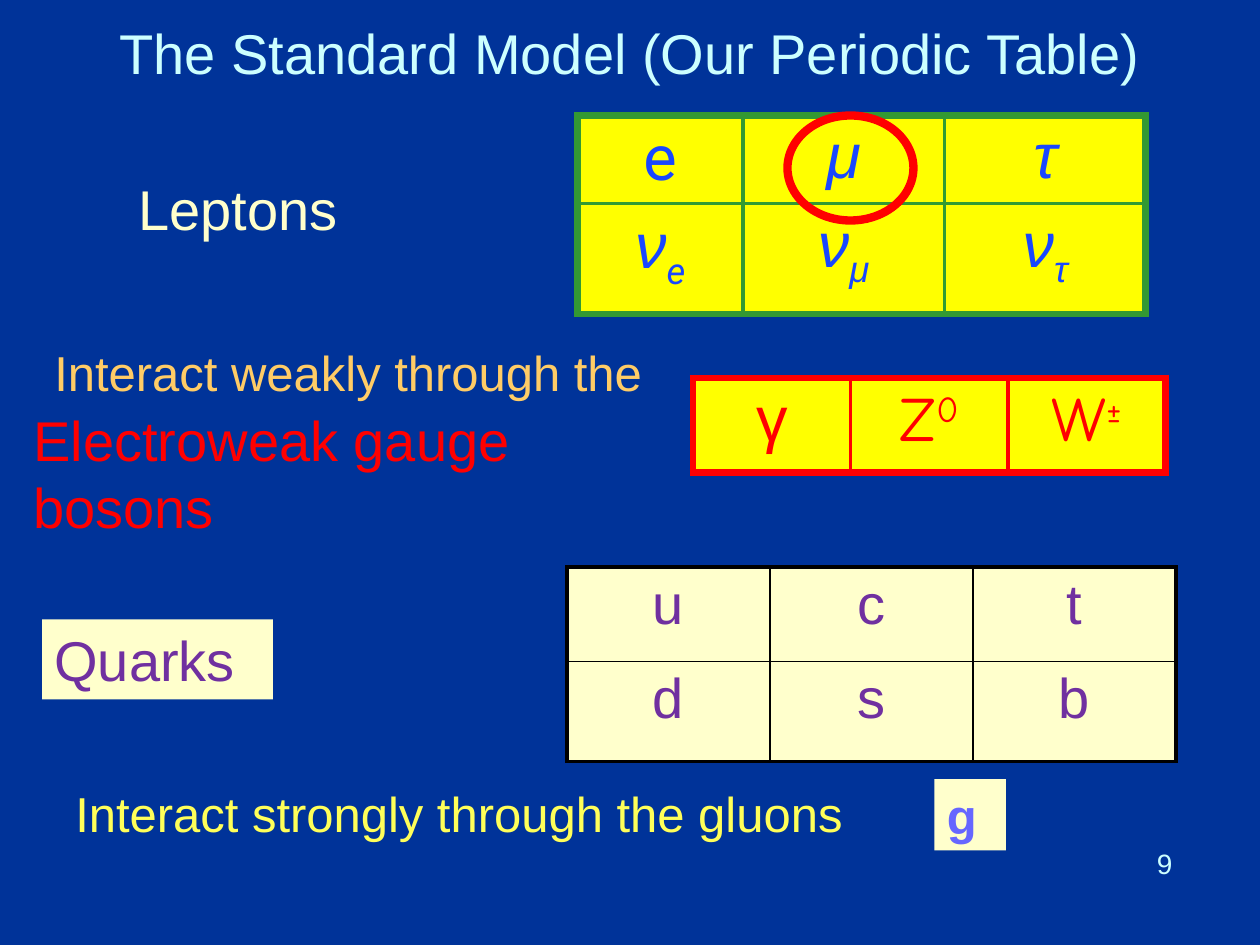
from dataclasses import dataclass

from lxml import etree
from pptx import Presentation
from pptx.dml.color import RGBColor
from pptx.enum.shapes import MSO_SHAPE
from pptx.enum.text import MSO_ANCHOR, PP_ALIGN
from pptx.oxml.ns import qn
from pptx.util import Emu, Inches, Pt

CENTER, LEFT = PP_ALIGN.CENTER, PP_ALIGN.LEFT
TOP, MIDDLE = MSO_ANCHOR.TOP, MSO_ANCHOR.MIDDLE
RECTANGLE, OVAL = MSO_SHAPE.RECTANGLE, MSO_SHAPE.OVAL

COLORS = {
    "background": "003399", "ice": "CCFFFF", "cream": "FFFFCC",
    "orange": "FFCC66", "lemon": "FFFF59", "yellow": "FFFF00",
    "red": "FF0000", "green": "339933", "blue": "1947FF",
    "purple": "7030A0", "violet": "6666FF", "black": "000000",
}
UNITS_PER_INCH = 12  # the slide is a grid of 120 columns by 90 rows


@dataclass
class Glyph:
    text: str
    font: str = "Arial"
    italic: bool = False
    baseline: int = 0  # percent; negative for subscripts


@dataclass
class Label:
    text: str
    box: tuple[float, float, float, float]
    color: str
    size: float = 32
    bold: bool = False
    fill: str | None = None
    anchor: MSO_ANCHOR = TOP


@dataclass
class ParticleTable:
    origin: tuple[float, float]
    columns: list[float]
    rows: list[float]
    particles: list[list[list[Glyph]]]
    color: str
    size: float
    fill: str
    border: str
    outer: float
    inner: float


def grid(units: float) -> Emu:
    return Inches(units / UNITS_PER_INCH)


def rgb(name: str) -> RGBColor:
    return RGBColor.from_string(COLORS[name])


def write(frame, glyphs: list[Glyph], *, size: float, color: str,
          bold: bool = False, align=LEFT, anchor=None) -> None:
    frame.word_wrap = True
    if anchor is not None:
        frame.vertical_anchor = anchor
    paragraph = frame.paragraphs[0]
    paragraph.alignment = align
    for glyph in glyphs:
        run = paragraph.add_run()
        run.text = glyph.text
        run.font.name = glyph.font
        run.font.size = Pt(size)
        run.font.bold = bold
        run.font.italic = glyph.italic
        run.font.color.rgb = rgb(color)
        if glyph.baseline:
            run.font._element.set("baseline", str(glyph.baseline * 1000))


def draw_label(slide, label: Label) -> None:
    box = [grid(n) for n in label.box]
    if label.fill:
        holder = slide.shapes.add_shape(RECTANGLE, *box)
        holder.shadow.inherit = False
        holder.fill.solid()
        holder.fill.fore_color.rgb = rgb(label.fill)
        holder.line.fill.background()
    else:
        holder = slide.shapes.add_textbox(*box)
    write(holder.text_frame, [Glyph(label.text)], size=label.size,
          color=label.color, bold=label.bold, anchor=label.anchor)


def set_borders(cell, color: str, widths: dict[str, float]) -> None:
    """Put the four edge lines ahead of the cell's fill."""
    properties = cell._tc.get_or_add_tcPr()
    for position, (side, width) in enumerate(widths.items()):
        line = etree.Element(qn(f"a:ln{side}"), w=str(Pt(width)))
        fill = etree.SubElement(line, qn("a:solidFill"))
        etree.SubElement(fill, qn("a:srgbClr"), val=COLORS[color])
        properties.insert(position, line)


def draw_table(slide, group: ParticleTable) -> None:
    row_count, column_count = len(group.rows), len(group.columns)
    size = sum(group.columns), sum(group.rows)
    table = slide.shapes.add_table(
        row_count, column_count, *map(grid, group.origin + size)).table
    table.first_row = table.horz_banding = False
    for column, width in zip(table.columns, group.columns):
        column.width = grid(width)
    for row, height in zip(table.rows, group.rows):
        row.height = grid(height)
    for r, particle_row in enumerate(group.particles):
        for c, glyphs in enumerate(particle_row):
            cell = table.cell(r, c)
            cell.fill.solid()
            cell.fill.fore_color.rgb = rgb(group.fill)
            write(cell.text_frame, glyphs, size=group.size,
                  color=group.color, align=CENTER)
            on_edge = {"L": c == 0, "R": c == column_count - 1,
                       "T": r == 0, "B": r == row_count - 1}
            set_borders(cell, group.border, {
                side: group.outer if edge else group.inner
                for side, edge in on_edge.items()})


def draw_ring(slide, box: tuple[float, ...], color: str, width: float) -> None:
    ring = slide.shapes.add_shape(OVAL, *map(grid, box))
    ring.shadow.inherit = False
    ring.fill.background()
    ring.line.color.rgb = rgb(color)
    ring.line.width = Pt(width)


def neutrino(flavour: str, font: str = "Arial") -> list[Glyph]:
    return [Glyph("ν", italic=True), Glyph(flavour, font, True, -25)]


def charged(boson: str, charge: str) -> list[Glyph]:
    return [Glyph(boson, "Comic Neue"), Glyph(charge, "Comic Neue", baseline=30)]


LABELS = [
    Label("9", (109, 80, 6, 4.4), "ice", size=16),
    Label("g", (89, 74.2, 6.8, 6.8), "violet", size=28, bold=True,
          fill="cream", anchor=MIDDLE),
    Label("Interact weakly through the", (4, 32, 108, 9), "orange", size=28),
    Label("Leptons", (12, 16, 33, 7.5), "cream"),
    Label("Interact strongly through the gluons", (6, 74, 102, 9), "lemon",
          size=28),
    Label("Electroweak gauge bosons", (2, 38, 64, 14.2), "red"),
    Label("Quarks", (4, 59, 22, 7.6), "purple", fill="cream"),
]

TABLES = [
    ParticleTable(
        (55, 11), [15.75, 19.2, 19.2], [8.2, 10.5],
        [[[Glyph("e", "Roboto")], [Glyph("μ", italic=True)],
          [Glyph("τ", italic=True)]],
         [neutrino("e", "Roboto"), neutrino("μ"), neutrino("τ")]],
        "blue", 36, "yellow", "green", 4.5, 2.25),
    ParticleTable(
        (66, 36), [15] * 3, [9],
        [[[Glyph("γ")], charged("Z", "0"), charged("W", "±")]],
        "red", 36, "yellow", "red", 4.5, 2.25),
    ParticleTable(
        (54, 54), [19.33] * 3, [9, 9.5],
        [[[Glyph(quark)] for quark in family] for family in ("uct", "dsb")],
        "purple", 32, "cream", "black", 2.25, 1),
]


def main() -> None:
    deck = Presentation()
    deck.slide_width, deck.slide_height = grid(120), grid(90)
    slide = deck.slides.add_slide(deck.slide_layouts[5])
    slide.background.fill.solid()
    slide.background.fill.fore_color.rgb = rgb("background")

    title = slide.shapes.title
    title.left, title.top, title.width, title.height = map(grid, (6, 0, 108, 10))
    write(title.text_frame, [Glyph("The Standard Model (Our Periodic Table)")],
          size=32, color="ice", align=CENTER, anchor=MIDDLE)

    for label in LABELS:
        draw_label(slide, label)
    for group in TABLES:
        draw_table(slide, group)
    draw_ring(slide, (75, 11, 12, 10), "red", 4.75)
    deck.save("out.pptx")


if __name__ == "__main__":
    main()
